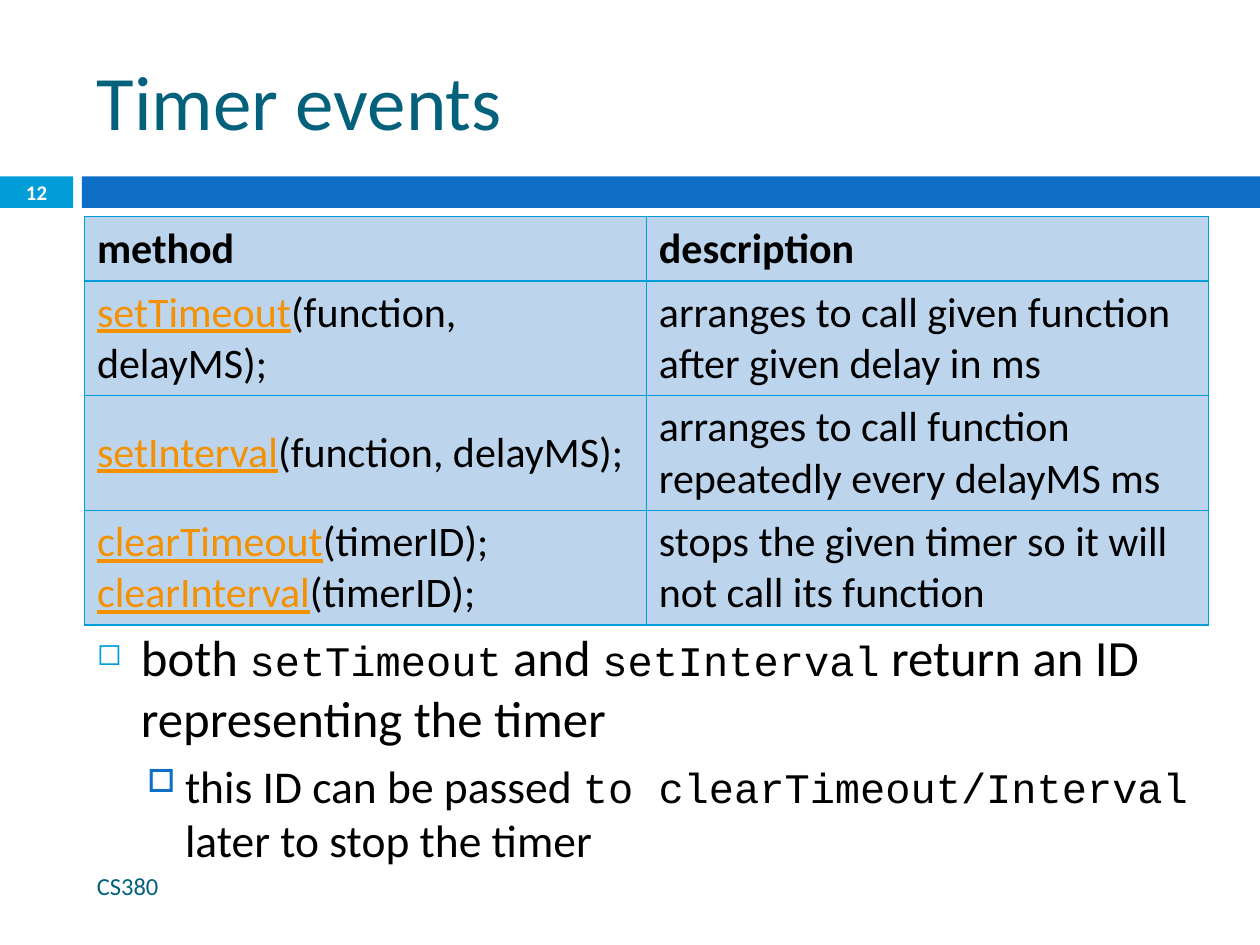
import pptx
import pptx.util
import pptx.dml.color
import pptx.enum.shapes
import pptx.enum.text
import pptx.oxml.ns
import lxml.etree

Inches = pptx.util.Inches
Pt = pptx.util.Pt
qn = pptx.oxml.ns.qn
MIDDLE = pptx.enum.text.MSO_ANCHOR.MIDDLE
CYAN, BLUE, TEAL, ORANGE = "009DD9", "0F6FC6", "04617B", "F49100"
BLACK, WHITE, CELL_FILL = "000000", "FFFFFF", "BDD4ED"

TABLE_ROWS = [
    ([("method", False)], "description"),
    ([("setTimeout", True), ("(function, delayMS);", False)],
     "arranges to call given function after given delay in ms"),
    ([("setInterval", True), ("(function, delayMS);", False)],
     "arranges to call function repeatedly every delayMS ms"),
    ([("clearTimeout", True), ("(timerID); ", False), None,
      ("clearInterval", True), ("(timerID);", False)],
     "stops the given timer so it will not call its function"),
]


def color(value):
    return pptx.dml.color.RGBColor.from_string(value)


def style_font(font, size, value, name="Calibri", bold=False):
    font.size = Pt(size)
    font.name = name
    font.bold = bold
    font.color.rgb = color(value)


def add_text_frame(slide, box, anchor):
    shape = slide.shapes.add_textbox(*map(Inches, box))
    frame = shape.text_frame
    frame.word_wrap = True
    frame.vertical_anchor = anchor
    return frame


def add_label(slide, box, text, size, value, bold=False, alignment=None):
    frame = add_text_frame(slide, box, MIDDLE)
    paragraph = frame.paragraphs[0]
    paragraph.text = text
    paragraph.alignment = alignment
    style_font(paragraph.font, size, value, bold=bold)


def add_bar(slide, box, value):
    left, top, width, height = map(Inches, box)
    shape = slide.shapes.add_shape(
        pptx.enum.shapes.MSO_SHAPE.RECTANGLE, left, top, width, height)
    shape.shadow.inherit = False
    shape.fill.solid()
    shape.fill.fore_color.rgb = color(value)
    shape.line.fill.background()


def add_band(slide, box, number):
    left, top, width, height = box
    number_width, gap = 0.58, 0.07
    number_box = (left, top, number_width, height)
    offset = number_width + gap
    add_bar(slide, number_box, CYAN)
    add_bar(slide, (left + offset, top, width - offset, height), BLUE)
    add_label(slide, number_box, number, 11.9, WHITE, True,
              pptx.enum.text.PP_ALIGN.CENTER)


def style_cell(cell):
    properties = cell._tc.get_or_add_tcPr()
    for side in ("a:lnL", "a:lnR", "a:lnT", "a:lnB"):
        line = lxml.etree.SubElement(properties, qn(side), w=str(Pt(0.79)))
        fill = lxml.etree.SubElement(line, qn("a:solidFill"))
        lxml.etree.SubElement(fill, qn("a:srgbClr"), val=CYAN)
    cell.fill.solid()
    cell.fill.fore_color.rgb = color(CELL_FILL)
    cell.vertical_anchor = MIDDLE


def fill_cell(cell, parts, bold):
    style_cell(cell)
    paragraph = cell.text_frame.paragraphs[0]
    for part in parts:
        if part is None:
            paragraph.add_line_break()
            continue
        text, linked = part
        run = paragraph.add_run()
        run.text = text
        style_font(run.font, 24, ORANGE if linked else BLACK, bold=bold)
        run.font.underline = linked


def add_method_table(slide, box):
    shape = slide.shapes.add_table(len(TABLE_ROWS), 2, *map(Inches, box))
    table = shape.table
    for index, (method, description) in enumerate(TABLE_ROWS):
        header = index == 0
        table.rows[index].height = Inches(0.51 if header else 0.91)
        fill_cell(table.cell(index, 0), method, header)
        fill_cell(table.cell(index, 1), [(description, False)], header)


def set_bullet(paragraph, character, value, percent, margin, indent):
    properties = paragraph._p.get_or_add_pPr()
    properties.set("marL", str(Inches(margin)))
    properties.set("indent", str(Inches(-indent)))
    bullet_color = lxml.etree.SubElement(properties, qn("a:buClr"))
    lxml.etree.SubElement(bullet_color, qn("a:srgbClr"), val=value)
    lxml.etree.SubElement(properties, qn("a:buSzPct"), val=str(percent * 1000))
    lxml.etree.SubElement(properties, qn("a:buChar"), char=character)


def add_bullet(paragraph, level, size, space, bullet, parts):
    paragraph.level = level
    paragraph.space_before = Pt(space)
    set_bullet(paragraph, *bullet)
    for text, is_code in parts:
        run = paragraph.add_run()
        run.text = text
        style_font(run.font, 24 if is_code else size, BLACK,
                   "Courier New" if is_code else "Calibri")


def add_bullets(slide, box):
    frame = add_text_frame(slide, box, pptx.enum.text.MSO_ANCHOR.TOP)
    add_bullet(frame.paragraphs[0], 0, 29, 7, ("◻", CYAN, 60, 0.35, 0.35), [
        ("both ", False), ("setTimeout", True), (" and ", False),
        ("setInterval", True),
        (" return an ID representing the timer", False)])
    add_bullet(frame.add_paragraph(), 1, 26, 5.5, ("□", BLUE, 70, 0.7, 0.3), [
        ("this ID can be passed ", False),
        ("to clearTimeout/Interval ", True),
        ("later to stop the timer", False)])


def main():
    presentation = pptx.Presentation()
    presentation.slide_width = Inches(10)
    presentation.slide_height = Inches(7.5)
    slide = presentation.slides.add_slide(presentation.slide_layouts[6])
    left, width = 0.67, 8.92
    add_band(slide, (0, 1.4, 10, 0.25), "12")
    add_label(slide, (left, 0.25, width, 1.08), "Timer events", 44, TEAL)
    add_label(slide, (left, 6.83, 5.93, 0.4), "CS380", 14, TEAL)
    add_bullets(slide, (left, 4.92, width, 1.33))
    add_method_table(slide, (left, 1.72, width, 3.24))
    presentation.save("out.pptx")


if __name__ == "__main__":
    main()
